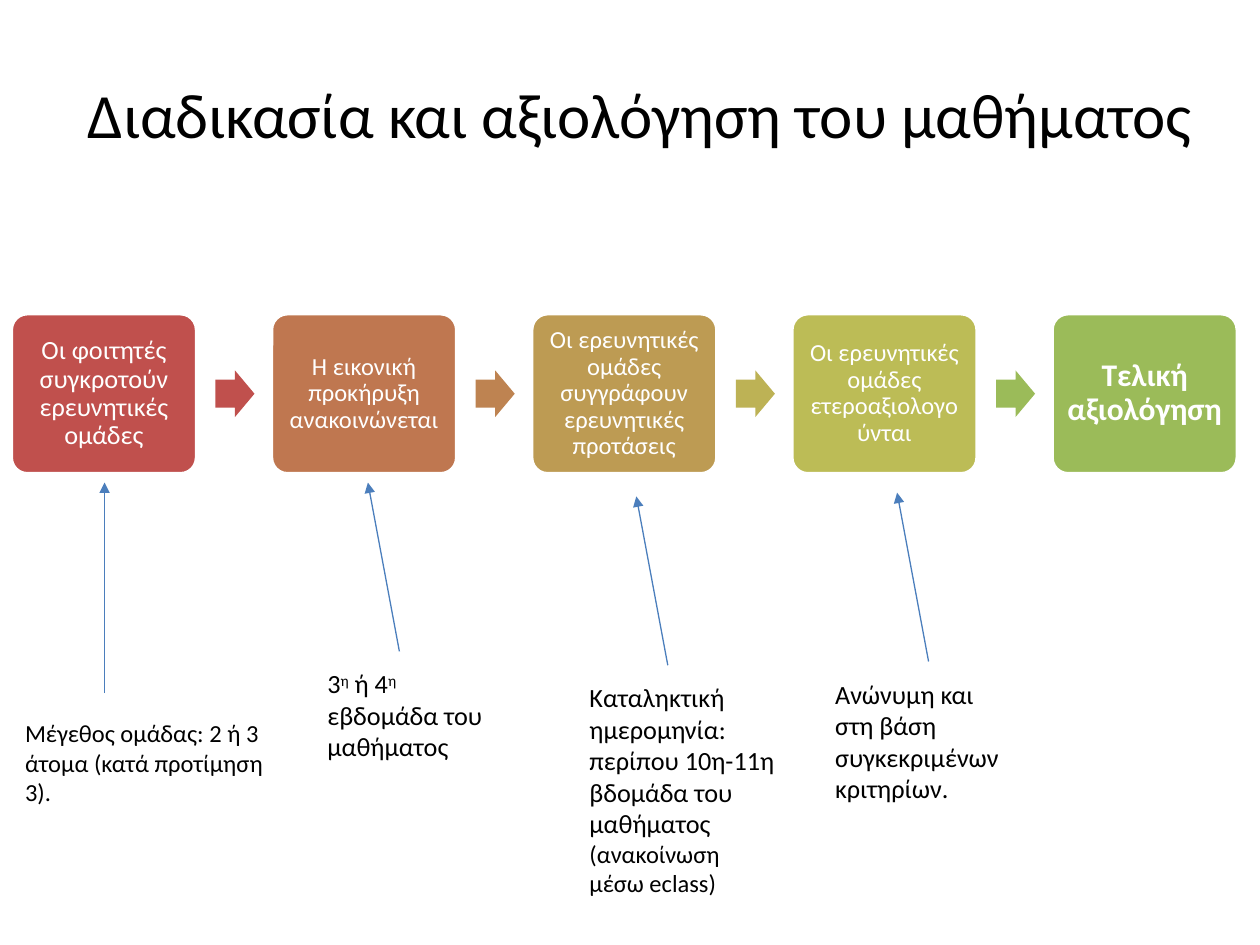
"""Build a slide showing the course process as five steps with notes."""
from lxml.etree import SubElement
from pptx import Presentation
from pptx.dml.color import RGBColor
from pptx.enum.shapes import MSO_CONNECTOR, MSO_SHAPE
from pptx.enum.text import MSO_ANCHOR, PP_ALIGN
from pptx.oxml.ns import qn
from pptx.util import Inches, Pt

FONT = "Calibri"
BLACK = RGBColor(0x00, 0x00, 0x00)
WHITE = RGBColor(0xFF, 0xFF, 0xFF)
BLUE = RGBColor(0x4B, 0x7E, 0xBC)
RED = RGBColor(0xC0, 0x50, 0x4D)
RUST = RGBColor(0xBF, 0x77, 0x50)
COPPER = RGBColor(0xBE, 0x83, 0x51)
TAN = RGBColor(0xBD, 0x9B, 0x53)
SAND = RGBColor(0xBD, 0xB2, 0x55)
OLIVE = RGBColor(0xBC, 0xBC, 0x56)
GREEN = RGBColor(0x9B, 0xBB, 0x59)

TITLE = "Διαδικασία και αξιολόγηση του μαθήματος"
# text, size, bold, margin, box colour, colour of the arrow that follows
STEPS = [
    ("Οι φοιτητές συγκροτούν ερευνητικές ομάδες", 15, False, 0.06, RED, RED),
    ("Η εικονική προκήρυξη ανακοινώνεται", 14, False, 0.06, RUST, COPPER),
    ("Οι ερευνητικές ομάδες συγγράφουν ερευνητικές προτάσεις", 14, False, 0.06, TAN, SAND),
    ("Οι ερευνητικές ομάδες ετεροαξιολογούνται", 14, False, 0.06, OLIVE, GREEN),
    ("Τελική αξιολόγηση", 18, True, 0.07, GREEN, None),
]
# box, size, runs as (text, font changes), pointer start and end
NOTES = [
    ((0.1, 5.65, 2.25, 0.81), 14,
     [("Μέγεθος ομάδας: 2 ή 3 άτομα (κατά προτίμηση 3).", {})],
     (0.83, 5.5), (0.83, 3.83)),
    ((2.5, 5.25, 1.67, 0.86), 15,
     [("3", {}), ("η", {"baseline": "30000"}), (" ή 4", {}),
      ("η", {"baseline": "30000"}), (" εβδομάδα του μαθήματος", {})],
     (3.17, 5.17), (2.92, 3.83)),
    ((4.58, 5.36, 1.67, 1.87), 15,
     [("Καταληκτική ημερομηνία: περίπου 10η-11η βδομάδα του μαθήματος ", {}),
      ("(ανακοίνωση μέσω eclass)", {"sz": "1400"})],
     (5.3, 5.28), (5.05, 3.94)),
    ((6.53, 5.33, 1.55, 1.11), 15,
     [("Ανώνυμη και στη βάση συγκεκριμένων κριτηρίων.", {})],
     (7.37, 5.25), (7.12, 3.91)),
]
STEP_LEFT, STEP_TOP, STEP_W, STEP_H, STEP_PITCH = 0.09, 2.49, 1.47, 1.27, 2.065
ARROW_W, ARROW_H, ARROW_GAP = 0.31, 0.37, 0.15


def set_font(p, size, color, bold=False):
    p.font.name = FONT
    p.font.size = Pt(size)
    p.font.bold = bold
    p.font.color.rgb = color


def add_filled(s, kind, box, color, adjustments):
    sp = s.shapes.add_shape(kind, *map(Inches, box))
    sp.shadow.inherit = False
    sp.fill.solid()
    sp.fill.fore_color.rgb = color
    sp.line.fill.background()
    for i, value in enumerate(adjustments):
        sp.adjustments[i] = value
    return sp


def add_step(s, i, text, size, bold, margin, color, arrow_color):
    left = STEP_LEFT + i * STEP_PITCH
    sp = add_filled(s, MSO_SHAPE.ROUNDED_RECTANGLE,
                    (left, STEP_TOP, STEP_W, STEP_H), color, [0.1])
    sp.line.color.rgb = WHITE
    sp.line.width = Pt(2)
    tf = sp.text_frame
    tf.word_wrap = True
    tf.vertical_anchor = MSO_ANCHOR.MIDDLE
    tf.margin_left = tf.margin_right = Inches(margin)
    tf.margin_top = tf.margin_bottom = Inches(margin)
    p = tf.paragraphs[0]
    p.text = text
    p.alignment = PP_ALIGN.CENTER
    p.line_spacing = 0.9
    set_font(p, size, WHITE, bold)
    if arrow_color is not None:
        top = STEP_TOP + (STEP_H - ARROW_H) / 2
        add_filled(s, MSO_SHAPE.RIGHT_ARROW,
                   (left + STEP_W + ARROW_GAP, top, ARROW_W, ARROW_H),
                   arrow_color, [0.6, 0.5])


def add_pointer(s, start, end):
    line = s.shapes.add_connector(MSO_CONNECTOR.STRAIGHT, *map(Inches, start + end))
    line.line.color.rgb = BLUE
    line.line.width = Pt(0.75)
    SubElement(line.line._get_or_add_ln(), qn("a:tailEnd"), type="triangle")
    SubElement(line._element.spPr, qn("a:effectLst"))


def add_note(s, box, size, runs):
    tf = s.shapes.add_textbox(*map(Inches, box)).text_frame
    tf.word_wrap = True
    p = tf.paragraphs[0]
    set_font(p, size, BLACK)
    for text, changes in runs:
        r = p.add_run()
        r.text = text
        for name, value in changes.items():
            r._r.get_or_add_rPr().set(name, value)


def main():
    prs = Presentation()
    prs.slide_width, prs.slide_height = Inches(10), Inches(7.5)
    s = prs.slides.add_slide(prs.slide_layouts[5])
    title = s.shapes.title
    title.left, title.top = Inches(0.33), Inches(0.3)
    title.width, title.height = Inches(9.5), Inches(1.2)
    title.text_frame.vertical_anchor = MSO_ANCHOR.MIDDLE
    p = title.text_frame.paragraphs[0]
    p.text = TITLE
    p.alignment = PP_ALIGN.CENTER
    set_font(p, 36, BLACK)
    for i, step in enumerate(STEPS):
        add_step(s, i, *step)
    for box, size, runs, start, end in NOTES:
        add_pointer(s, start, end)
        add_note(s, box, size, runs)
    prs.save("out.pptx")


if __name__ == "__main__":
    main()
